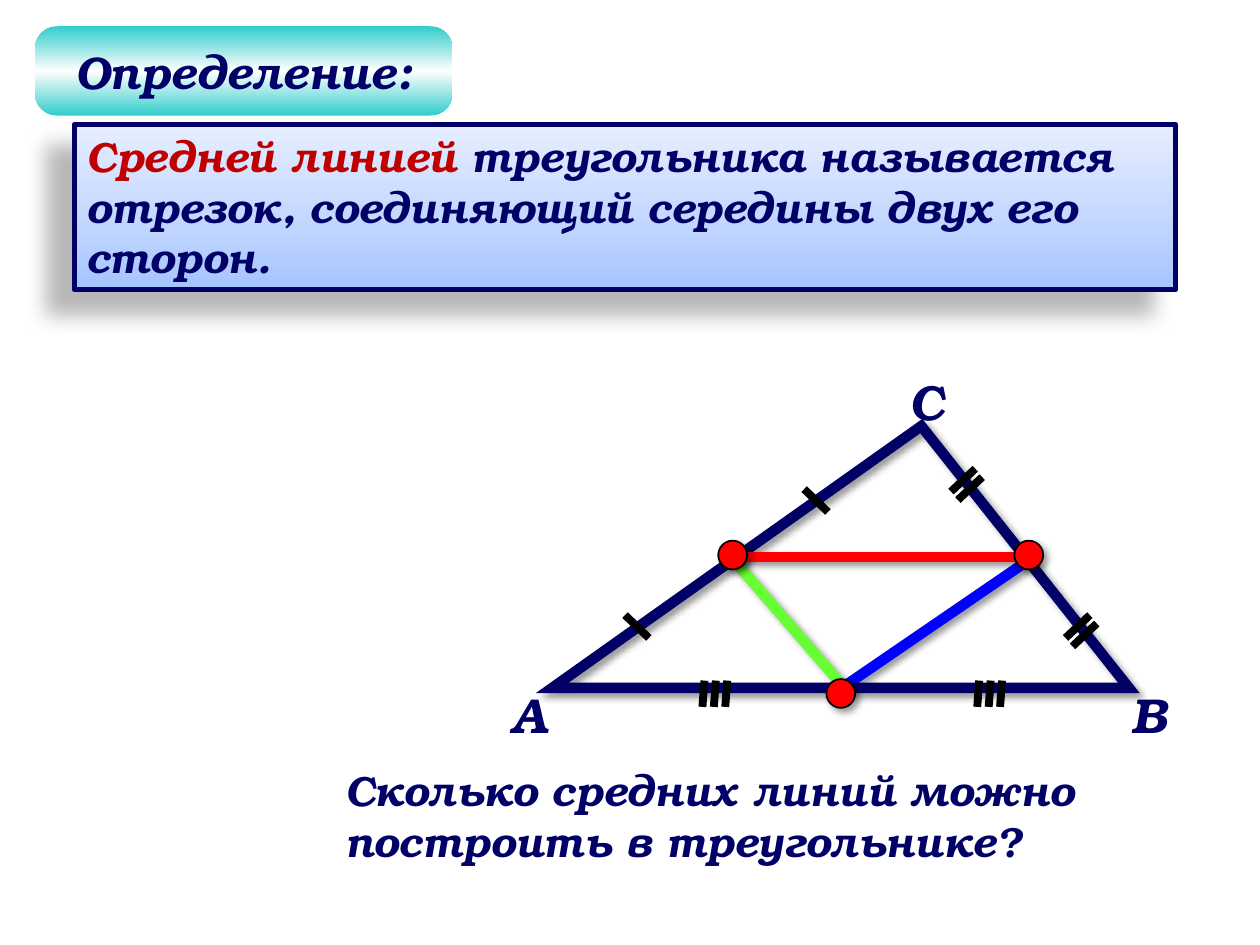
from itertools import product

from pptx import Presentation
from pptx.dml.color import RGBColor
from pptx.enum.shapes import MSO_CONNECTOR as Connector, MSO_SHAPE as Shape
from pptx.enum.text import MSO_ANCHOR as Anchor, MSO_AUTO_SIZE as AutoSize, PP_ALIGN as Align
from pptx.oxml import parse_xml
from pptx.oxml.ns import nsdecls
from pptx.util import Cm, Pt

FONT = "TeX Gyre Bonum"
NAVY = "000066"
RED = "FF0000"
BLACK = "000000"
SOFT_SHADOW = (40, 4, 3, 45)
WIDE_SHADOW = (28, 11.8, 19.7, 141)


def paint(color_format, color):
    """Set a colour format to a hex colour."""
    color_format.rgb = RGBColor.from_string(color)


def set_line(shape, color, width):
    """Give a shape or connector a solid line."""
    shape.line.fill.solid()
    paint(shape.line.fill.fore_color, color)
    shape.line.width = Pt(width)


def set_shadow(shape, shadow=None):
    """Add an outer shadow (opacity, blur, distance, angle), or none."""
    content = ""
    if shadow:
        opacity, blur, distance, angle = shadow
        content = (
            f'<a:outerShdw blurRad="{Pt(blur)}" dist="{Pt(distance)}" dir="{angle * 60000}" '
            f'algn="tl" rotWithShape="0"><a:srgbClr val="{BLACK}">'
            f'<a:alpha val="{opacity * 1000}"/></a:srgbClr></a:outerShdw>'
        )
    shape._element.spPr.append(
        parse_xml(f'<a:effectLst {nsdecls("a")}>{content}</a:effectLst>')
    )


def set_gradient(shape, stops, angle):
    """Fill a shape with a linear gradient, its angle measured clockwise."""
    content = "".join(
        f'<a:gs pos="{position * 1000}"><a:srgbClr val="{color}"/></a:gs>'
        for position, color in stops
    )
    gradient = parse_xml(
        f'<a:gradFill {nsdecls("a")} rotWithShape="1"><a:gsLst>{content}</a:gsLst>'
        f'<a:lin ang="{angle * 60000}" scaled="0"/></a:gradFill>'
    )
    shape._element.spPr.prstGeom.addnext(gradient)


def add_shape(slide, kind, left, top, width, height):
    """Add a preset shape."""
    return slide.shapes.add_shape(kind, Cm(left), Cm(top), Cm(width), Cm(height))


def add_segment(slide, start, end, color, width, shadow=None):
    """Draw a straight segment between two points."""
    ends = [Cm(value) for value in (*start, *end)]
    segment = slide.shapes.add_connector(Connector.STRAIGHT, *ends)
    set_line(segment, color, width)
    set_shadow(segment, shadow)


def write(shape, runs, size, wrap=True, align=Align.LEFT):
    """Write bold italic runs of (text, colour) in a shape."""
    frame = shape.text_frame
    frame.word_wrap = wrap
    paragraph = frame.paragraphs[0]
    paragraph.alignment = align
    for text, color in runs:
        run = paragraph.add_run()
        run.text = text
        run.font.name = FONT
        run.font.size = Pt(size)
        run.font.bold = run.font.italic = True
        paint(run.font.color, color)


def add_text(slide, text, left, top, width, height, size, wrap=True):
    """Add a navy text box that grows with its text."""
    box = slide.shapes.add_textbox(Cm(left), Cm(top), Cm(width), Cm(height))
    write(box, [(text, NAVY)], size, wrap)
    box.text_frame.auto_size = AutoSize.SHAPE_TO_FIT_TEXT


def add_triangle(slide):
    """Add the outline of triangle ABC with sharp corners."""
    triangle = add_shape(slide, Shape.ISOSCELES_TRIANGLE, 11.13, 8.59, 11.63, 5.28)
    triangle.adjustments[0] = 0.64
    triangle.fill.background()
    set_line(triangle, NAVY, 6)
    triangle.line._ln.append(parse_xml(f'<a:miter {nsdecls("a")} lim="800000"/>'))
    set_shadow(triangle, SOFT_SHADOW)


def add_midpoint(slide, left, top):
    """Add a red dot on the middle of a side."""
    dot = add_shape(slide, Shape.OVAL, left, top, 0.58, 0.58)
    dot.fill.solid()
    paint(dot.fill.fore_color, RED)
    set_line(dot, BLACK, 1)
    set_shadow(dot, SOFT_SHADOW)


def add_ticks(slide, halves, count, step, stroke):
    """Mark both halves of a side with the same number of ticks."""
    for (left, top), index in product(halves, range(count)):
        start = (left + index * step[0], top + index * step[1])
        end = (start[0] + stroke[0], start[1] + stroke[1])
        add_segment(slide, start, end, BLACK, 4.5)


def add_definition(slide):
    """Add the framed definition of the midline."""
    box = add_shape(slide, Shape.RECTANGLE, 1.5, 2.51, 22.2, 3.33)
    set_gradient(box, [(0, "A4C4FF"), (35, "BFD4FF"), (100, "E6EEFF")], 270)
    set_line(box, NAVY, 3)
    set_shadow(box, WIDE_SHADOW)
    write(box, [
        ("Средней линией ", "C00000"),
        ("треугольника называется отрезок, соединяющий середины двух его сторон.", NAVY),
    ], 24)
    box.text_frame.vertical_anchor = Anchor.TOP
    box.text_frame.auto_size = AutoSize.SHAPE_TO_FIT_TEXT


def add_heading(slide):
    """Add the rounded heading plate."""
    plate = add_shape(slide, Shape.ROUNDED_RECTANGLE, 0.71, 0.53, 8.41, 1.8)
    plate.adjustments[0] = 0.25
    set_gradient(plate, [(0, "33CCCC"), (50, "FFFFFF"), (100, "33CCCC")], 90)
    plate.line.fill.background()
    set_shadow(plate)
    write(plate, [("Определение:", NAVY)], 26, wrap=False, align=Align.CENTER)
    plate.text_frame.vertical_anchor = Anchor.MIDDLE


def main():
    """Build the slide and save it."""
    presentation = Presentation()
    presentation.slide_width = Cm(25.4)
    presentation.slide_height = Cm(19.05)
    slide = presentation.slides.add_slide(presentation.slide_layouts[6])

    add_segment(slide, (17.04, 13.89), (14.78, 11.28), "66FF33", 6, SOFT_SHADOW)
    add_segment(slide, (20.65, 11.35), (17.04, 13.82), "0000FF", 6, SOFT_SHADOW)
    add_text(slide, "А", 10.06, 13.67, 1.27, 1.45, 28, wrap=False)
    add_text(slide, "С", 18.08, 7.37, 1.7, 1.45, 28)
    add_text(slide, "В", 22.56, 13.67, 1.27, 1.45, 28, wrap=False)
    add_triangle(slide)
    add_segment(slide, (14.86, 11.23), (20.78, 11.23), RED, 6, SOFT_SHADOW)
    for left, top in [(14.48, 10.9), (20.45, 10.9), (16.66, 13.69)]:
        add_midpoint(slide, left, top)
    add_ticks(slide, [(16.21, 9.86), (12.6, 12.4)], 1, (0, 0), (0.48, 0.46))
    add_ticks(slide, [(19.66, 9.45), (21.97, 12.4)], 2, (0.14, 0.17), (-0.49, 0.46))
    add_ticks(slide, [(14.2, 13.72), (19.74, 13.72)], 3, (0.23, 0), (-0.04, 0.53))
    add_text(slide, "Сколько средних линий можно построить в треугольнике?",
             6.71, 15.29, 18.19, 2.31, 24)
    add_definition(slide)
    add_heading(slide)

    presentation.save("out.pptx")


if __name__ == "__main__":
    main()
